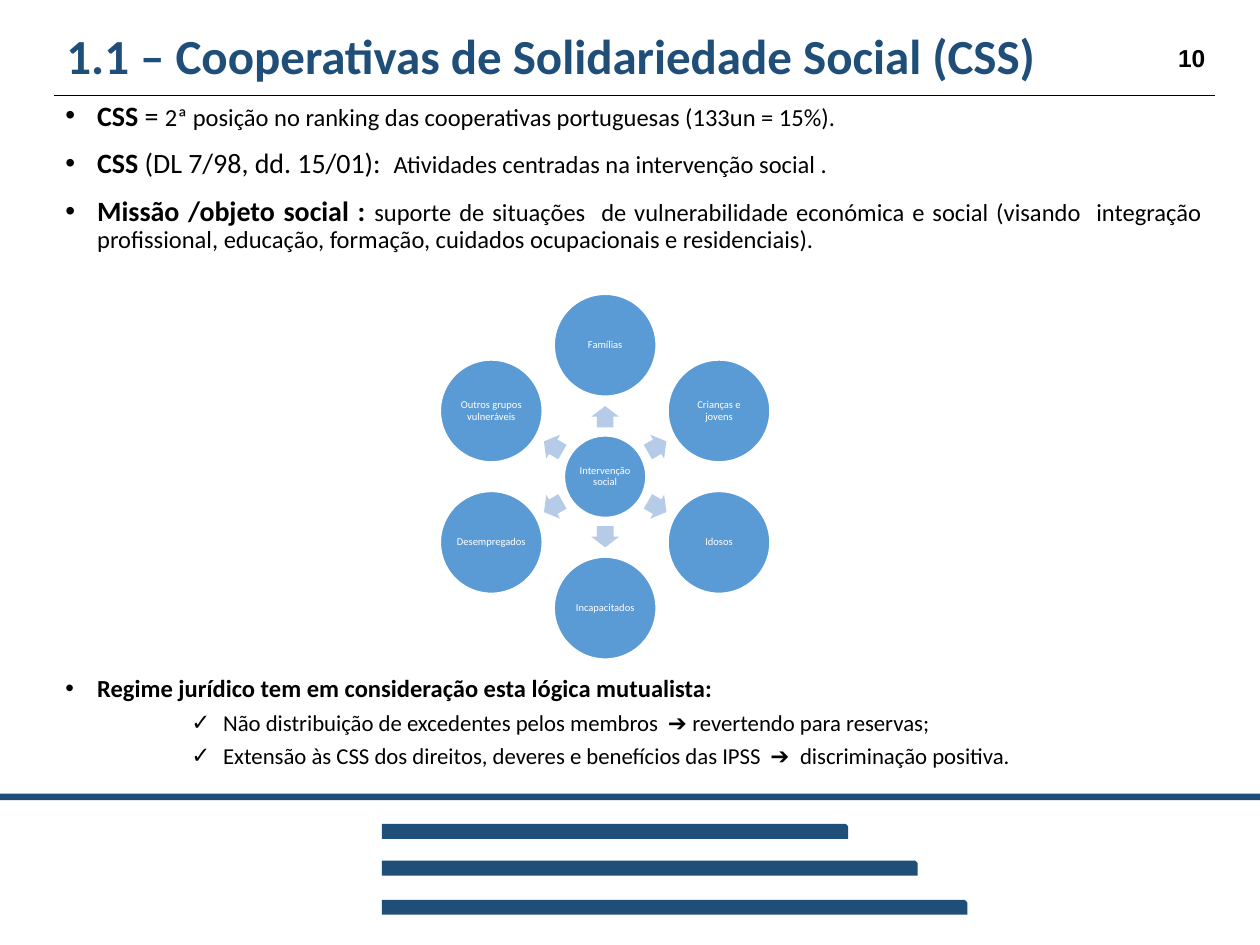
import math
from dataclasses import dataclass

import pptx
import pptx.dml.color
import pptx.enum.shapes
import pptx.enum.text
import pptx.oxml.ns
import pptx.util
from lxml import etree
from pptx.util import Cm, Pt

SHAPES = pptx.enum.shapes.MSO_SHAPE
ALIGN = pptx.enum.text.PP_ALIGN
ANCHOR = pptx.enum.text.MSO_ANCHOR


@dataclass(frozen=True)
class Theme:
    navy: str = "1F4E79"
    blue: str = "5B9BD5"
    pale_blue: str = "B5CBE7"
    black: str = "000000"
    white: str = "FFFFFF"
    font: str = "Calibri"
    number_font: str = "Arial"
    title_size: int = 28
    lead_size: int = 16
    body_size: int = 14
    detail_size: int = 13
    node_size: int = 6


THEME = Theme()
LEAD, BODY, DETAIL = THEME.lead_size, THEME.body_size, THEME.detail_size

# Each paragraph is a list of runs: text, size, bold
FACTS = [
    [("CSS ", LEAD, True), ("= ", LEAD, False),
     ("2ª posição no ranking das cooperativas portuguesas (133un = 15%).", BODY, False)],
    [("CSS ", LEAD, True), ("(DL 7/98, dd. 15/01):  ", LEAD, False),
     ("Atividades centradas na intervenção social .", BODY, False)],
    [("Missão /objeto social : ", LEAD, True),
     ("suporte de situações  de vulnerabilidade económica e social (visando  integração "
      "profissional, educação, formação, cuidados ocupacionais e residenciais).", BODY, False)],
]
REGIME = [("Regime jurídico tem em consideração esta lógica mutualista:", BODY, True)]
RULES = [
    [("Não distribuição de excedentes pelos membros  ➔ revertendo para reservas;", DETAIL, False)],
    [("Extensão às CSS dos direitos, deveres e benefícios das IPSS  ➔  discriminação positiva.",
      DETAIL, False)],
]
# Clockwise from the top
GROUPS = ["Famílias", "Crianças e jovens", "Idosos", "Incapacitados",
          "Desempregados", "Outros grupos vulneráveis"]


def rgb(color):
    return pptx.dml.color.RGBColor.from_string(color)


def style_font(font, size, color, name=THEME.font, bold=False):
    font.name, font.size, font.bold = name, Pt(size), bold
    font.color.rgb = rgb(color)


def add_shape(slide, kind, left, top, width, height, fill):
    shape = slide.shapes.add_shape(kind, Cm(left), Cm(top), Cm(width), Cm(height))
    shape.shadow.inherit = False
    shape.fill.solid()
    shape.fill.fore_color.rgb = rgb(fill)
    shape.line.fill.background()
    return shape


def add_text_box(slide, left, top, width, height, anchor=ANCHOR.TOP):
    box = slide.shapes.add_textbox(Cm(left), Cm(top), Cm(width), Cm(height))
    box.text_frame.word_wrap = True
    box.text_frame.vertical_anchor = anchor
    return box.text_frame


def add_line(slide, left, right, y):
    line = slide.shapes.add_connector(
        pptx.enum.shapes.MSO_CONNECTOR.STRAIGHT, Cm(left), Cm(y), Cm(right), Cm(y))
    line.line.color.rgb = rgb(THEME.black)
    line.line.width = Pt(0.5)
    etree.SubElement(line._element.spPr, pptx.oxml.ns.qn("a:effectLst"))


def add_bullet(frame, runs, mark="•", margin=0.64, space=10, align=ALIGN.LEFT):
    first = not frame.text
    paragraph = frame.paragraphs[0] if first else frame.add_paragraph()
    properties = paragraph._p.get_or_add_pPr()
    properties.set("marL", str(Cm(margin)))
    properties.set("indent", str(Cm(-0.64)))
    etree.SubElement(properties, pptx.oxml.ns.qn("a:buFont"), typeface="Arial")
    etree.SubElement(properties, pptx.oxml.ns.qn("a:buChar"), char=mark)
    paragraph.alignment = align
    paragraph.line_spacing = 0.9
    if not first:
        paragraph.space_before = Pt(space)
    for text, size, bold in runs:
        run = paragraph.add_run()
        run.text = text
        style_font(run.font, size, THEME.black, bold=bold)


def add_circle(slide, x, y, diameter, text):
    circle = add_shape(slide, SHAPES.OVAL, x - diameter / 2, y - diameter / 2,
                       diameter, diameter, THEME.blue)
    circle.line.color.rgb = rgb(THEME.white)
    circle.line.width = Pt(1)
    frame = circle.text_frame
    frame.word_wrap = True
    frame.margin_left = frame.margin_right = frame.margin_top = frame.margin_bottom = 0
    frame.vertical_anchor = ANCHOR.MIDDLE
    paragraph = frame.paragraphs[0]
    paragraph.text = text
    paragraph.alignment = ALIGN.CENTER
    paragraph.line_spacing = 0.9
    style_font(paragraph.font, THEME.node_size, THEME.white)


def add_radial_diagram(slide, x, y):
    node_radius, arrow_radius = 2.65, 1.21
    arrow_width, arrow_height = 0.43, 0.56
    add_circle(slide, x, y, 1.65, "Intervenção social")
    for index, group in enumerate(GROUPS):
        degrees = index * 360 / len(GROUPS) - 90
        across, down = math.cos(math.radians(degrees)), math.sin(math.radians(degrees))
        arrow = add_shape(slide, SHAPES.RIGHT_ARROW,
                          x + arrow_radius * across - arrow_width / 2,
                          y + arrow_radius * down - arrow_height / 2,
                          arrow_width, arrow_height, THEME.pale_blue)
        arrow.adjustments[0] = 0.6
        arrow.rotation = degrees % 360
        add_circle(slide, x + node_radius * across, y + node_radius * down, 2.06, group)


def add_label(frame, text, size, color, name, spacing=1.0):
    paragraph = frame.paragraphs[0]
    paragraph.text = text
    paragraph.line_spacing = spacing
    style_font(paragraph.font, size, color, name, bold=True)


def main():
    presentation = pptx.Presentation()
    presentation.slide_width, presentation.slide_height = Cm(25.4), Cm(19.05)
    slide = presentation.slides.add_slide(presentation.slide_layouts[6])

    # Footer bars and header rule
    add_shape(slide, SHAPES.RECTANGLE, 0, 16, 25.4, 0.13, THEME.navy)
    for top, width in [(16.61, 9.4), (17.35, 10.8), (18.14, 11.8)]:
        add_shape(slide, SHAPES.SNIP_1_RECTANGLE, 7.7, top, width, 0.3, THEME.navy)
    add_line(slide, 1.09, 24.49, 1.93)

    # Title and slide number
    title = add_text_box(slide, 1.09, 0.53, 23.4, 1.32, ANCHOR.MIDDLE)
    add_label(title, "1.1 – Cooperativas de Solidariedade Social (CSS)",
              THEME.title_size, THEME.navy, THEME.font, 0.9)
    number = add_text_box(slide, 23.5, 0.74, 1.2, 0.86)
    add_label(number, "10", THEME.body_size, THEME.black, THEME.number_font)

    # Facts above the diagram
    facts = add_text_box(slide, 1.07, 1.93, 23.42, 3.4)
    for runs in FACTS:
        add_bullet(facts, runs, align=ALIGN.JUSTIFY if runs is FACTS[-1] else ALIGN.LEFT)

    add_radial_diagram(slide, 12.2, 9.61)

    # Legal regime below the diagram
    regime = add_text_box(slide, 1.07, 13.51, 23.42, 2.3)
    add_bullet(regime, REGIME)
    for runs in RULES:
        add_bullet(regime, runs, mark="✓", margin=3.18, space=5)

    presentation.save("out.pptx")


if __name__ == "__main__":
    main()
